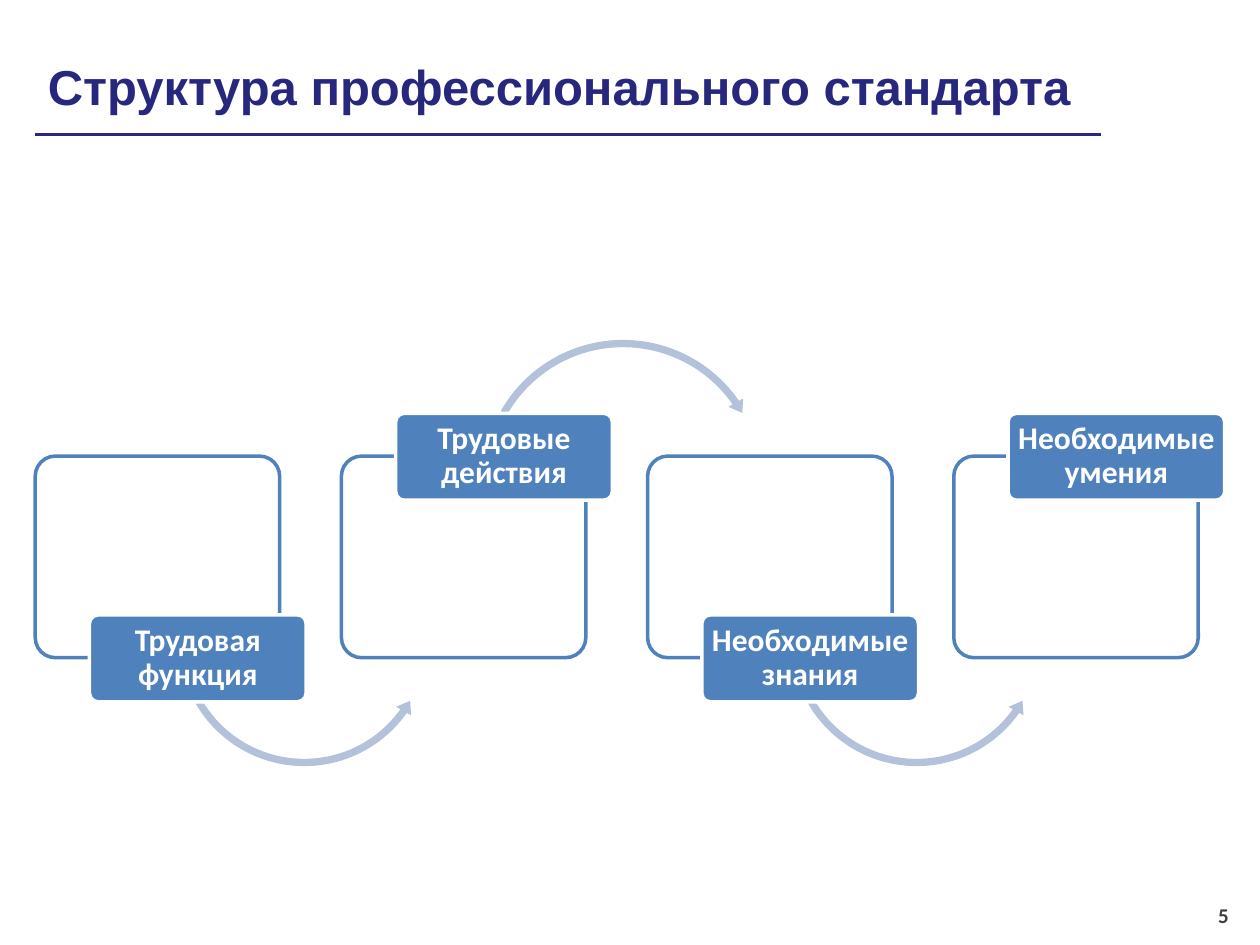
from lxml.etree import SubElement
from pptx import Presentation
from pptx.dml.color import RGBColor
from pptx.enum.shapes import MSO_CONNECTOR, MSO_SHAPE
from pptx.enum.text import MSO_ANCHOR, PP_ALIGN
from pptx.oxml.ns import qn
from pptx.util import Inches, Pt

COLORS = {"navy": "27277E", "blue": "4F81BD", "pale": "B3C1DB",
          "white": "FFFFFF", "gray": "404040"}
STAGES = ["Трудовая функция", "Трудовые действия",
          "Необходимые знания", "Необходимые умения"]
LEFT, STEP = 0.28, 2.43
FRAME_TOP = 3.62
LOWER_ARROW = (MSO_SHAPE.LEFT_CIRCULAR_ARROW, 1.1, 4.05, 2.07,
               (0.028, 3.424, 21.179, 90.245, 0.033))
UPPER_ARROW = (MSO_SHAPE.CIRCULAR_ARROW, 1.08, 2.66, 2.31,
               (0.025, 3.036, 195.209, 125.755, 0.029))


class SlideBuilder:
    """Holds the style and the current slide and draws each kind of element."""

    def __init__(self, page):
        self.page = page

    def color(self, name):
        return RGBColor.from_string(COLORS[name])

    def fill_text(self, frame, text, size, font, color, align):
        frame.text = text
        frame.word_wrap = True
        frame.vertical_anchor = MSO_ANCHOR.MIDDLE
        paragraph = frame.paragraphs[0]
        paragraph.alignment = align
        for span in paragraph.runs:
            span.font.size = Pt(size)
            span.font.name = font
            span.font.bold = True
            span.font.color.rgb = self.color(color)
        return paragraph

    def title(self, text, left, top, width, height):
        box = self.page.shapes.title
        box.left, box.top = Inches(left), Inches(top)
        box.width, box.height = Inches(width), Inches(height)
        self.fill_text(box.text_frame, text, 28, "Arial", "navy", PP_ALIGN.LEFT)

    def rule(self, left, right, top):
        line = self.page.shapes.add_connector(
            MSO_CONNECTOR.STRAIGHT, Inches(left), Inches(top), Inches(right), Inches(top))
        line.line.color.rgb = self.color("navy")
        line.line.width = Pt(1.5)
        SubElement(line._element.spPr, qn("a:effectLst"))

    def number(self, text, left, top, width, height):
        box = self.page.shapes.add_textbox(
            Inches(left), Inches(top), Inches(width), Inches(height))
        self.fill_text(box.text_frame, text, 12, "Calibri", "gray", PP_ALIGN.RIGHT)

    def shape(self, kind, left, top, width, height, fill, adjustments, line=None):
        shape = self.page.shapes.add_shape(
            kind, Inches(left), Inches(top), Inches(width), Inches(height))
        shape.shadow.inherit = False
        for index, value in enumerate(adjustments):
            shape.adjustments[index] = value
        shape.fill.solid()
        shape.fill.fore_color.rgb = self.color(fill)
        if line:
            shape.line.color.rgb = self.color(line)
            shape.line.width = Pt(2)
        else:
            shape.line.fill.background()
        return shape

    def frame(self, left):
        shape = self.shape(MSO_SHAPE.ROUNDED_RECTANGLE, left, FRAME_TOP, 1.94, 1.6,
                           "white", [0.1], "blue")
        fill_color = shape._element.spPr.find(qn("a:solidFill"))[0]
        SubElement(fill_color, qn("a:alpha"), val="90000")

    def arrow(self, left, style):
        kind, offset, top, size, adjustments = style
        self.shape(kind, left + offset, top, size, size, "pale", adjustments)

    def label(self, text, left, top):
        shape = self.shape(MSO_SHAPE.ROUNDED_RECTANGLE, left, top, 1.72, 0.69,
                           "blue", [0.1], "white")
        frame = shape.text_frame
        frame.margin_left = frame.margin_right = Inches(0.04)
        frame.margin_top = frame.margin_bottom = Inches(0.03)
        paragraph = self.fill_text(frame, text, 18, "Calibri", "white", PP_ALIGN.CENTER)
        paragraph.line_spacing = 0.9


def main():
    deck = Presentation()
    deck.slide_width, deck.slide_height = Inches(10), Inches(7.5)
    builder = SlideBuilder(deck.slides.add_slide(deck.slide_layouts[5]))
    builder.rule(LEFT, 8.74, 1.07)
    builder.title("Структура профессионального стандарта", LEFT, 0.3, 8.46, 0.77)
    builder.number("5", 7.52, 7.06, 2.33, 0.4)
    for index, text in enumerate(STAGES):
        left = LEFT + index * STEP
        is_upper = index % 2 == 1
        builder.frame(left)
        if index < len(STAGES) - 1:
            builder.arrow(left, UPPER_ARROW if is_upper else LOWER_ARROW)
        builder.label(text, left + 0.43, 3.28 if is_upper else 4.88)
    deck.save("out.pptx")


if __name__ == "__main__":
    main()
